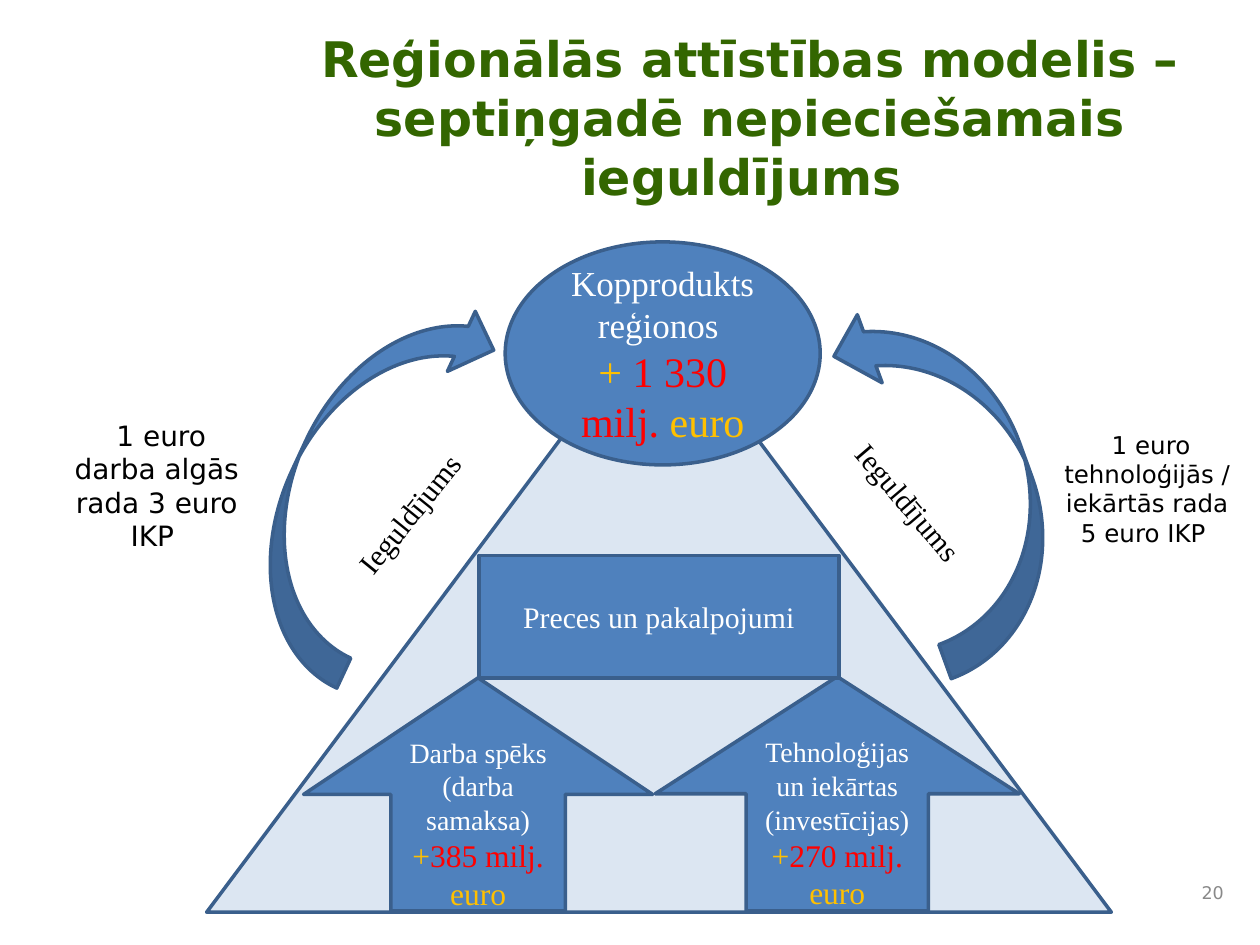
"""Build the regional development model slide."""
from pptx import Presentation, util as u
from pptx.dml.color import RGBColor
from pptx.enum import shapes, text

HUE = {"green": "336600", "blue": "4F81BD", "edge": "3A5F8C", "pale": "DCE6F2",
       "white": "FFFFFF", "black": "000000", "gold": "FFC000", "red": "FF0000",
       "gray": "898989"}
SANS, SERIF = "DejaVu Sans", "Times New Roman"
KIND, ALIGN, ANCHOR = shapes.MSO_SHAPE, text.PP_ALIGN, text.MSO_ANCHOR


def gain(sum_, size):
    return [("+", size, "gold"), (sum_, size, "red"), ("euro", size, "gold")]


FIGURES = [
    (KIND.ISOSCELES_TRIANGLE, (1.64, 2.44, 7.18, 4.8), 0, "pale", []),
    (KIND.OVAL, (4.01, 1.92, 2.5, 1.77), 0, "blue",
     [[("Kopprodukts reģionos ", 20, "white")],
      [("+ ", 24, "gold"), ("1 330 milj. ", 24, "red"), ("euro", 24, "gold")]]),
    (KIND.UP_ARROW, (2.41, 5.38, 2.77, 1.85), 0, "blue",
     [[("Darba spēks (darba samaksa)", 16, "white")], gain("385 milj. ", 18)]),
    (KIND.UP_ARROW, (5.2, 5.37, 2.89, 1.86), 0, "blue",
     [[("Tehnoloģijas un iekārtas (investīcijas)", 16, "white")],
      gain("270 milj. ", 18)]),
    (KIND.RECTANGLE, (3.8, 4.41, 2.86, 0.97), 0, "blue",
     [[("Preces un pakalpojumi", 17, "white")]]),
    (KIND.CURVED_RIGHT_ARROW, (7, 2.27, 1.15, 3.01), 160, "blue", []),
    (KIND.CURVED_LEFT_ARROW, (2.35, 2.17, 1.05, 3.22), 204.9, "blue", []),
]

LABELS = [
    ("Reģionālās attīstības modelis – septiņgadē nepieciešamais ieguldījums ",
     (2.27, 0.18, 7.36, 1.27), 0, SANS, 28, "green", ALIGN.CENTER),
    (" 1 euro darba algās rada 3 euro IKP ",
     (0.48, 3.27, 1.53, 1.95), 0, SANS, 16, "black", ALIGN.CENTER),
    (" 1 euro tehnoloģijās / iekārtās rada 5 euro IKP ",
     (8.34, 3.36, 1.53, 1.82), 0, SANS, 14, "black", ALIGN.CENTER),
    ("Ieguldījums", (2.43, 3.56, 2.16, 0.39), 308.9, SERIF, 17, "black", ALIGN.LEFT),
    ("Ieguldījums", (6.4, 4.11, 2.16, 0.39), 49.5, SERIF, 17, "black", ALIGN.LEFT),
    ("20", (9.33, 6.95, 0.48, 0.27), 0, SANS, 10, "gray", ALIGN.RIGHT),
]


def color(name):
    return RGBColor.from_string(HUE[name])


def write(shape, rows, face, align, anchor):
    frame = shape.text_frame
    frame.word_wrap = True
    frame.vertical_anchor = anchor
    for i, row in enumerate(rows):
        para = frame.add_paragraph() if i else frame.paragraphs[0]
        para.alignment = align
        for words, size, hue in row:
            run = para.add_run()
            run.text = words
            run.font.name = face
            run.font.size = u.Pt(size)
            run.font.bold = hue == "green"
            run.font.color.rgb = color(hue)


def main():
    deck = Presentation()
    deck.slide_width, deck.slide_height = u.Inches(10), u.Inches(7.5)
    slide = deck.slides.add_slide(deck.slide_layouts[6])
    for kind, box, turn, hue, rows in FIGURES:
        shape = slide.shapes.add_shape(kind, *map(u.Inches, box))
        shape.rotation = turn
        shape.shadow.inherit = False
        shape.fill.solid()
        shape.fill.fore_color.rgb = color(hue)
        shape.line.color.rgb = color("edge")
        shape.line.width = u.Pt(2)
        write(shape, rows, SERIF, ALIGN.CENTER, ANCHOR.MIDDLE)
    for words, box, turn, face, size, hue, align in LABELS:
        label = slide.shapes.add_textbox(*map(u.Inches, box))
        label.rotation = turn
        write(label, [[(words, size, hue)]], face, align, ANCHOR.TOP)
    deck.save("out.pptx")


if __name__ == "__main__":
    main()
